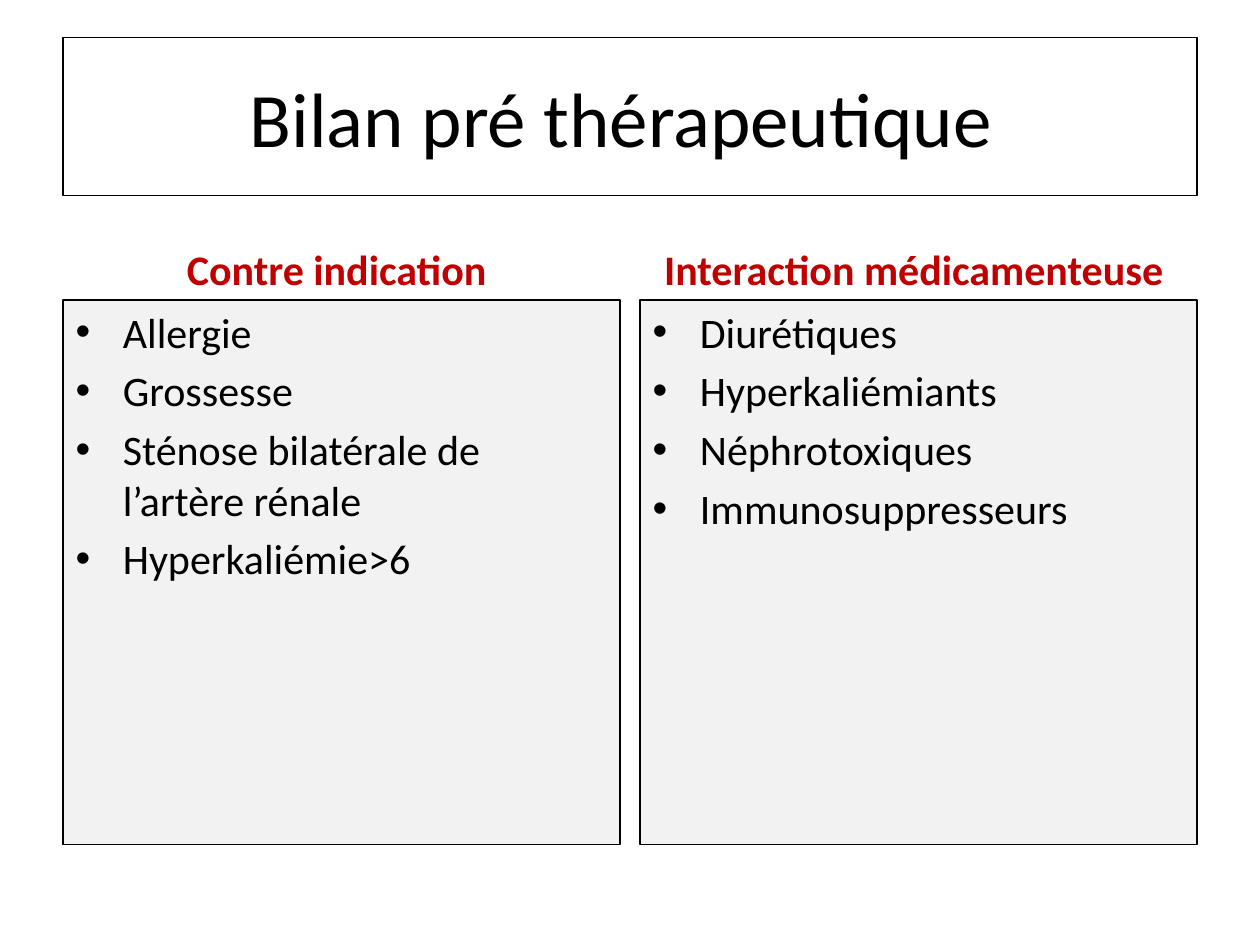
from dataclasses import dataclass
from typing import Optional

from pptx import Presentation
from pptx.dml.color import RGBColor
from pptx.enum.text import MSO_ANCHOR, MSO_AUTO_SIZE, PP_ALIGN
from pptx.shapes.placeholder import SlidePlaceholder
from pptx.slide import Slide
from pptx.util import Inches, Pt


@dataclass(frozen=True)
class Theme:
    """Colours, font and type sizes of the slide."""

    font: str = "Calibri"
    ink: RGBColor = RGBColor(0x00, 0x00, 0x00)
    head: RGBColor = RGBColor(0xC0, 0x00, 0x00)
    panel: RGBColor = RGBColor(0xF2, 0xF2, 0xF2)
    title: float = 44
    body: float = 24
    rule: float = 0.75


@dataclass(frozen=True)
class Column:
    """A heading over a bulleted panel."""

    head: str
    items: tuple[str, ...]


THEME = Theme()
EDGE, WIDE, GAP = 0.5, 9, 0.16
SPAN = (WIDE - GAP) / 2
COLUMNS = (
    Column(
        "Contre indication ",
        ("Allergie", "Grossesse", "Sténose bilatérale de l’artère rénale", "Hyperkaliémie>6"),
    ),
    Column(
        "Interaction médicamenteuse ",
        ("Diurétiques", "Hyperkaliémiants", "Néphrotoxiques", "Immunosuppresseurs"),
    ),
)


def place(shape: SlidePlaceholder, left: float, top: float, width: float, height: float) -> None:
    """Move and size a placeholder in inches."""
    shape.left, shape.top = Inches(left), Inches(top)
    shape.width, shape.height = Inches(width), Inches(height)


def write(
    shape: SlidePlaceholder,
    *lines: str,
    size: float = THEME.body,
    color: RGBColor = THEME.ink,
    bold: bool = False,
    align: Optional[PP_ALIGN] = None,
    anchor: MSO_ANCHOR = MSO_ANCHOR.TOP,
) -> None:
    """Fill a placeholder with one formatted paragraph per line."""
    frame = shape.text_frame
    frame.text = "\n".join(lines)
    frame.word_wrap = True
    frame.auto_size = MSO_AUTO_SIZE.NONE
    frame.vertical_anchor = anchor
    for para in frame.paragraphs:
        para.alignment = align
        for run in para.runs:
            font = run.font
            font.name, font.size, font.bold = THEME.font, Pt(size), bold
            font.color.rgb = color


def border(shape: SlidePlaceholder) -> None:
    """Give a placeholder a thin outline."""
    shape.line.color.rgb = THEME.ink
    shape.line.width = Pt(THEME.rule)


def draw(slide: Slide, col: Column, index: int) -> None:
    """Draw one column in its pair of placeholders."""
    left = EDGE + index * (SPAN + GAP)
    head, panel = (slide.placeholders[2 * index + step] for step in (1, 2))
    place(head, left, 1.68, SPAN, 0.7)
    write(head, col.head, color=THEME.head, bold=True,
          align=PP_ALIGN.CENTER, anchor=MSO_ANCHOR.BOTTOM)
    place(panel, left, 2.38, SPAN, 4.32)
    panel.fill.solid()
    panel.fill.fore_color.rgb = THEME.panel
    border(panel)
    write(panel, *col.items)


def main() -> None:
    """Build and save the slide."""
    deck = Presentation()
    deck.slide_width, deck.slide_height = Inches(10), Inches(7.5)
    slide = deck.slides.add_slide(deck.slide_layouts.get_by_name("Comparison"))
    title = slide.shapes.title
    place(title, EDGE, 0.3, WIDE, 1.25)
    border(title)
    write(title, "Bilan pré thérapeutique ", size=THEME.title,
          align=PP_ALIGN.CENTER, anchor=MSO_ANCHOR.MIDDLE)
    for index, col in enumerate(COLUMNS):
        draw(slide, col, index)
    deck.save("out.pptx")


if __name__ == "__main__":
    main()
